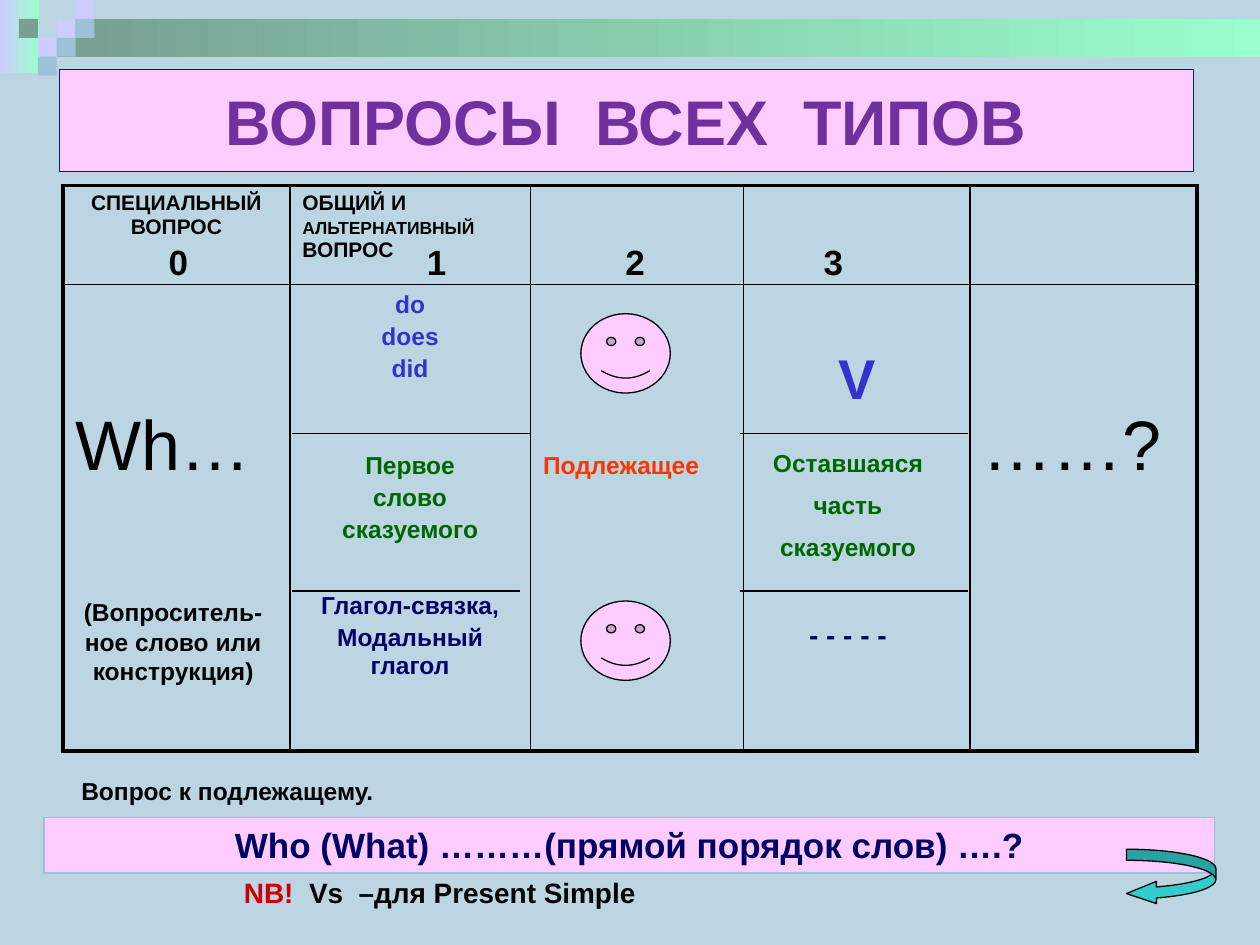
"""Build the slide that sums up the word order of all question types."""
import pptx
import pptx.dml.color
import pptx.enum.shapes
import pptx.enum.text
import pptx.oxml.ns
import pptx.util
from lxml import etree

Inches, Pt = pptx.util.Inches, pptx.util.Pt
SHAPES = pptx.enum.shapes.MSO_SHAPE
LEFT, CENTER = pptx.enum.text.PP_ALIGN.LEFT, pptx.enum.text.PP_ALIGN.CENTER
TOP, MIDDLE = pptx.enum.text.MSO_ANCHOR.TOP, pptx.enum.text.MSO_ANCHOR.MIDDLE

BLACK, PINK, NAVY, BLUE, GREEN = "000000", "FFCCFF", "000066", "3333CC", "006600"
LILAC, STEEL, SAGE, MINT = "CCCCFF", "9DC2D7", "779F92", "99FFCC"

TITLE = [(0, [("ВОПРОСЫ  ВСЕХ  ТИПОВ", 36, "7030A0", True)])]
TITLE_BOX = (0.47, 0.55, 9, 0.81)

GRADIENT_BARS = [((0, 0, 0.31, 0.58), LILAC, MINT), ((0.45, 0.15, 9.55, 0.3), SAGE, MINT)]
SQUARE = 0.15
SQUARES = [(3, 1, LILAC), (4, 0, LILAC), (4, 1, STEEL), (2, 2, LILAC),
           (1, 1, SAGE), (3, 2, STEEL), (2, 3, STEEL)]

TABLE_BOX = (0.5, 1.47, 9, 4.49)
COLUMN_WIDTHS = [1.8, 1.91, 1.69, 1.8, 1.8]
ROW_HEIGHTS = [0.79, 3.7]
AUXILIARIES = [
    (0, [("do", 14, BLUE, True)]),
    (2.5, [("does", 14, BLUE, True)]),
    (2.5, [("did", 14, BLUE, True)]),
    (40, [("Первое", 14, GREEN, True)]),
    (2.5, [("слово", 14, GREEN, True)]),
    (2.5, [("сказуемого", 14, GREEN, True)]),
    (28, [("Глагол-связка,", 14, NAVY, True)]),
    (2.5, [("Модальный глагол", 14, NAVY, True)]),
]
CELLS = [
    [(0.05, CENTER, [(0, [("СПЕЦИАЛЬНЫЙ ВОПРОС", 12, BLACK, True)])]),
     (0.05, LEFT, [(0, [("ОБЩИЙ И ", 12, BLACK, True), ("АЛЬТЕРНАТИВНЫЙ", 10, BLACK, True),
                        (" ВОПРОС", 12, BLACK, True)])]),
     None, None, None],
    [(0.97, LEFT, [(0, [("Wh…", 40, BLACK, False)])]),
     (0.05, CENTER, AUXILIARIES),
     (1.33, LEFT, [(0, [("Подлежащее", 14, "FF3300", True)])]),
     (0.51, CENTER, [(0, [("V", 32, BLUE, True)])]),
     (0.97, LEFT, [(0, [("……?", 40, BLACK, False)])])],
]

NUMBERS = [("0", 0.98, 0.87), ("1", 3.03, 0.87), ("2", 4.53, 1.02), ("3", 6.18, 0.87)]
NUMBER_TOP, NUMBER_HEIGHT = 1.86, 0.43
DIVIDERS = [(2.32, 4.21, 3.44), (2.32, 4.13, 4.69), (5.87, 7.68, 3.44), (5.87, 7.68, 4.69)]
SMILEY_TOPS = [2.49, 4.77]

NOTES = [
    ((6.02, 3.51, 1.42, 2.18), [
        (0, [("Оставшаяся", 14, GREEN, True)]),
        (7, [("часть", 14, GREEN, True)]),
        (7, [("сказуемого", 14, GREEN, True)]),
        (32, [("- - - - -", 16, NAVY, True)])]),
    ((0.51, 4.69, 1.73, 1.87),
     [(0, [("(Вопроситель-ное слово или конструкция)", 14, BLACK, True)])]),
    ((0.35, 6.11, 2.91, 0.33), [(0, [("Вопрос к подлежащему.", 14, BLACK, True)])]),
    ((1.69, 6.9, 3.54, 0.37), [(0, [(" NB!", 16, "CC0000", True),
                                    ("  Vs  –для Present Simple", 16, BLACK, True)])]),
]
SUBJECT_QUESTION = [(0, [("Who (What) ………(прямой порядок слов) ….?", 20, NAVY, True)])]


def rgb(value):
    return pptx.dml.color.RGBColor.from_string(value)


def inches(box):
    return [Inches(length) for length in box]


def write(frame, paragraphs, align=CENTER, anchor=TOP):
    frame.word_wrap = True
    frame.vertical_anchor = anchor
    for index, (space, runs) in enumerate(paragraphs):
        paragraph = frame.paragraphs[0] if index == 0 else frame.add_paragraph()
        paragraph.alignment = align
        paragraph.space_before = Pt(space)
        for text, size, color, bold in runs:
            run = paragraph.add_run()
            run.text = text
            run.font.name, run.font.size, run.font.bold = "Arial", Pt(size), bold
            run.font.color.rgb = rgb(color)


def paint(shape, fill, line=None):
    shape.fill.solid()
    shape.fill.fore_color.rgb = rgb(fill)
    if line:
        shape.line.color.rgb = rgb(line)
        shape.line.width = Pt(0.75)
    else:
        shape.line.fill.background()


def add_shape(slide, kind, box, fill, line=None):
    shape = slide.shapes.add_shape(kind, *inches(box))
    shape.shadow.inherit = False
    paint(shape, fill, line)
    return shape


def add_text(slide, box, paragraphs):
    write(slide.shapes.add_textbox(*inches(box)).text_frame, paragraphs)


def add_banner(slide):
    for box, start, end in GRADIENT_BARS:
        bar = add_shape(slide, SHAPES.RECTANGLE, box, start)
        bar.fill.gradient()
        bar.fill.gradient_angle = 0
        for stop, color in zip(bar.fill.gradient_stops, (start, end)):
            stop.color.rgb = rgb(color)
    for column, row, color in SQUARES:
        box = (column * SQUARE, row * SQUARE, SQUARE, SQUARE)
        add_shape(slide, SHAPES.RECTANGLE, box, color)


def set_borders(cell, outer_sides):
    properties = cell._tc.get_or_add_tcPr()
    for index, (side, outer) in enumerate(zip(("lnL", "lnR", "lnT", "lnB"), outer_sides)):
        width = Pt(2.25 if outer else 1)
        border = etree.Element(pptx.oxml.ns.qn("a:" + side), w=str(width))
        fill = etree.SubElement(border, pptx.oxml.ns.qn("a:solidFill"))
        etree.SubElement(fill, pptx.oxml.ns.qn("a:srgbClr"), val=BLACK)
        properties.insert(index, border)


def add_question_table(slide):
    last_row, last_column = len(ROW_HEIGHTS) - 1, len(COLUMN_WIDTHS) - 1
    table = slide.shapes.add_table(last_row + 1, last_column + 1, *inches(TABLE_BOX)).table
    table.first_row = table.horz_banding = False
    for column, width in zip(table.columns, COLUMN_WIDTHS):
        column.width = Inches(width)
    for row, height in zip(table.rows, ROW_HEIGHTS):
        row.height = Inches(height)
    for r, contents in enumerate(CELLS):
        for c, content in enumerate(contents):
            cell = table.cell(r, c)
            cell.fill.background()
            set_borders(cell, (c == 0, c == last_column, r == 0, r == last_row))
            if content:
                margin, align, paragraphs = content
                cell.margin_top = Inches(margin)
                write(cell.text_frame, paragraphs, align)


def add_divider(slide, start, end, y):
    ends = inches((start, y, end, y))
    line = slide.shapes.add_connector(pptx.enum.shapes.MSO_CONNECTOR.STRAIGHT, *ends)
    line.line.color.rgb = rgb(BLACK)
    line.line.width = Pt(0.75)
    etree.SubElement(line._element.spPr, pptx.oxml.ns.qn("a:effectLst"))


def main():
    deck = pptx.Presentation()
    deck.slide_width, deck.slide_height = Inches(10), Inches(7.5)
    slide = deck.slides.add_slide(deck.slide_layouts[5])
    slide.background.fill.solid()
    slide.background.fill.fore_color.rgb = rgb("BBD5E3")

    heading = slide.shapes.title
    heading.left, heading.top, heading.width, heading.height = inches(TITLE_BOX)
    paint(heading, PINK, "002060")
    write(heading.text_frame, TITLE, anchor=MIDDLE)

    add_banner(slide)
    add_question_table(slide)
    for number, left, width in NUMBERS:
        box = (left, NUMBER_TOP, width, NUMBER_HEIGHT)
        add_text(slide, box, [(0, [(number, 20, BLACK, True)])])
    for divider in DIVIDERS:
        add_divider(slide, *divider)
    for box, paragraphs in NOTES:
        add_text(slide, box, paragraphs)
    for top in SMILEY_TOPS:
        add_shape(slide, SHAPES.SMILEY_FACE, (4.61, top, 0.71, 0.63), PINK, BLACK)

    strip = add_shape(slide, SHAPES.RECTANGLE, (0.35, 6.49, 9.29, 0.44), PINK, STEEL)
    write(strip.text_frame, SUBJECT_QUESTION)
    arrow = add_shape(slide, SHAPES.CURVED_LEFT_ARROW, (8.94, 6.74, 0.71, 0.44), "33CCCC", BLACK)
    for index, value in enumerate((0.2, 0.4, 0.54)):
        arrow.adjustments[index] = value
    deck.save("out.pptx")


if __name__ == "__main__":
    main()
